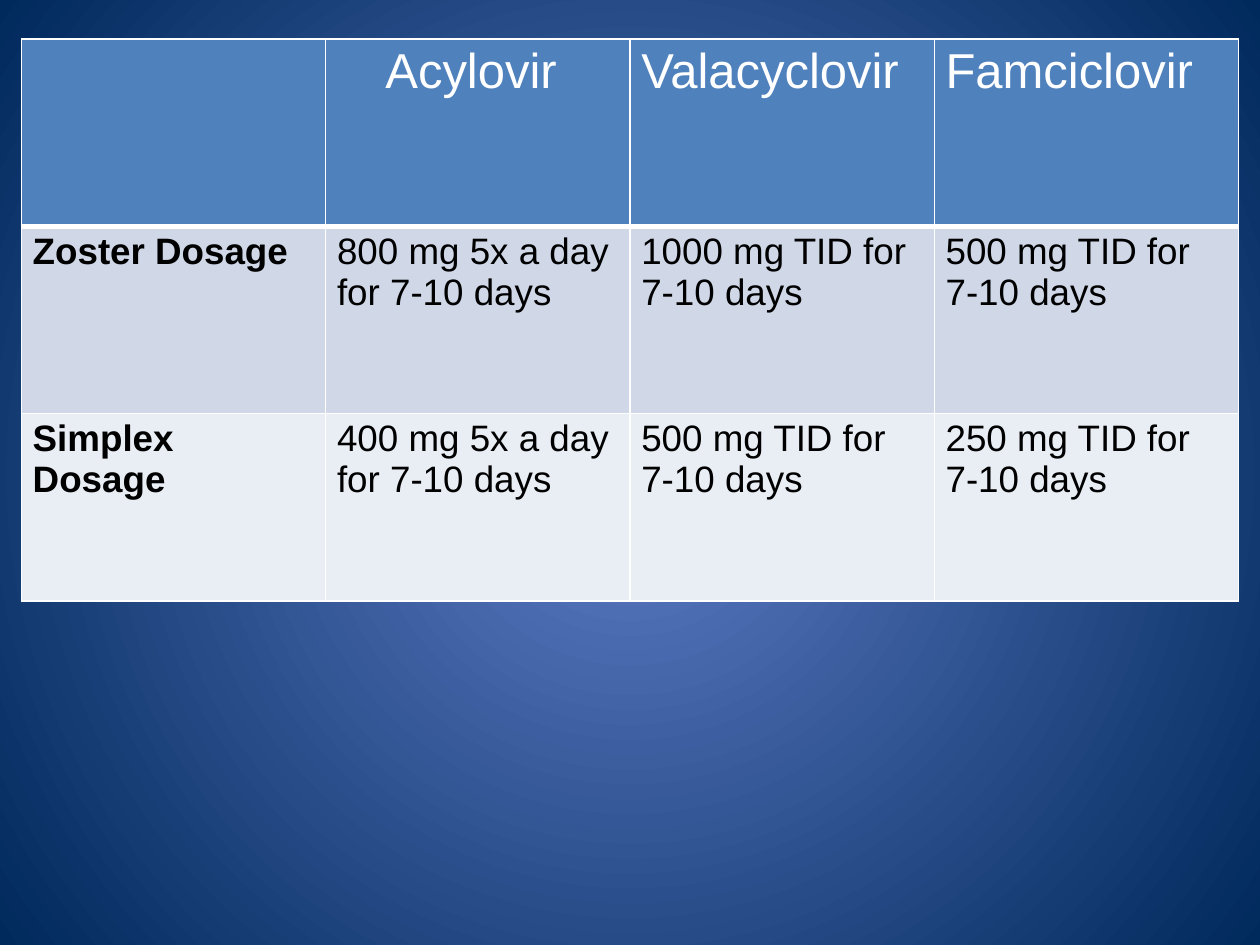
from pptx import Presentation
from pptx.dml.color import RGBColor
from pptx.enum.text import PP_ALIGN
from pptx.oxml.ns import qn
from pptx.oxml.xmlchemy import OxmlElement
from pptx.util import Inches, Pt

CENTER, LEFT = PP_ALIGN.CENTER, PP_ALIGN.LEFT
BLANK_LAYOUT = 6
COLORS = {
    "glow": "5E7CC5",
    "navy": "00295C",
    "header": "4F81BD",
    "zoster": "D0D8E8",
    "simplex": "E9EDF4",
    "white": "FFFFFF",
    "black": "000000",
}
DOSAGES = [
    ["", "Acylovir ", "Valacyclovir", "Famciclovir"],
    ["Zoster Dosage", "800 mg 5x a day for 7-10 days",
     "1000 mg TID for 7-10 days", "500 mg TID for 7-10 days"],
    ["Simplex Dosage", "400 mg 5x a day for 7-10 days",
     "500 mg TID for 7-10 days", "250 mg TID for 7-10 days"],
]
ROW_FILLS = ["header", "zoster", "simplex"]


class SlideBuilder:
    font = "Arial"
    header_size = Pt(28)
    body_size = Pt(21)

    def __init__(self, slide):
        self.slide = slide

    def color(self, name):
        return RGBColor.from_string(COLORS[name])

    def background(self, inner, outer):
        fill = self.slide.background.fill
        fill.gradient()
        for stop, name, position in zip(fill.gradient_stops, (inner, outer), (0, 1)):
            stop.color.rgb = self.color(name)
            stop.position = position
        # Turn the linear gradient into a circular one around the centre
        gradient = self.slide.element.find(".//" + qn("a:gradFill"))
        gradient.remove(gradient.find(qn("a:lin")))
        circle = OxmlElement("a:path")
        circle.set("path", "circle")
        center = OxmlElement("a:fillToRect")
        for side in "ltrb":
            center.set(side, "50000")
        circle.append(center)
        gradient.append(circle)

    def borders(self, cell, bottom_width):
        properties = cell._tc.get_or_add_tcPr()
        widths = {"L": 1, "R": 1, "T": 1, "B": bottom_width}
        for index, (side, width) in enumerate(widths.items()):
            line = OxmlElement(f"a:ln{side}")
            line.set("w", str(Pt(width)))
            solid = OxmlElement("a:solidFill")
            shade = OxmlElement("a:srgbClr")
            shade.set("val", COLORS["white"])
            solid.append(shade)
            line.append(solid)
            properties.insert(index, line)

    def cell(self, cell, text, fill, header, bold, align):
        cell.fill.solid()
        cell.fill.fore_color.rgb = self.color(fill)
        cell.margin_left = cell.margin_right = Inches(0.09)
        cell.margin_top = cell.margin_bottom = Inches(0.04)
        self.borders(cell, 3 if header else 1)
        if not text:
            return
        para = cell.text_frame.paragraphs[0]
        para.alignment = align
        span = para.add_run()
        span.text = text
        span.font.name = self.font
        span.font.size = self.header_size if header else self.body_size
        span.font.bold = bold
        span.font.color.rgb = self.color("white" if header else "black")

    def table(self, rows, fills, left, top, width, height):
        frame = self.slide.shapes.add_table(
            len(rows), len(rows[0]),
            Inches(left), Inches(top), Inches(width), Inches(height))
        for r, (texts, fill) in enumerate(zip(rows, fills)):
            for c, text in enumerate(texts):
                header = r == 0
                self.cell(frame.table.cell(r, c), text, fill, header,
                          bold=not header and c == 0,
                          align=CENTER if header and c == 1 else LEFT)


def main():
    deck = Presentation()
    deck.slide_width, deck.slide_height = Inches(10), Inches(7.5)
    page = SlideBuilder(deck.slides.add_slide(deck.slide_layouts[BLANK_LAYOUT]))

    # Radial blue backdrop
    page.background("glow", "navy")

    # Dosage comparison
    page.table(DOSAGES, ROW_FILLS, 0.17, 0.31, 9.66, 4.46)

    deck.save("out.pptx")


if __name__ == "__main__":
    main()
